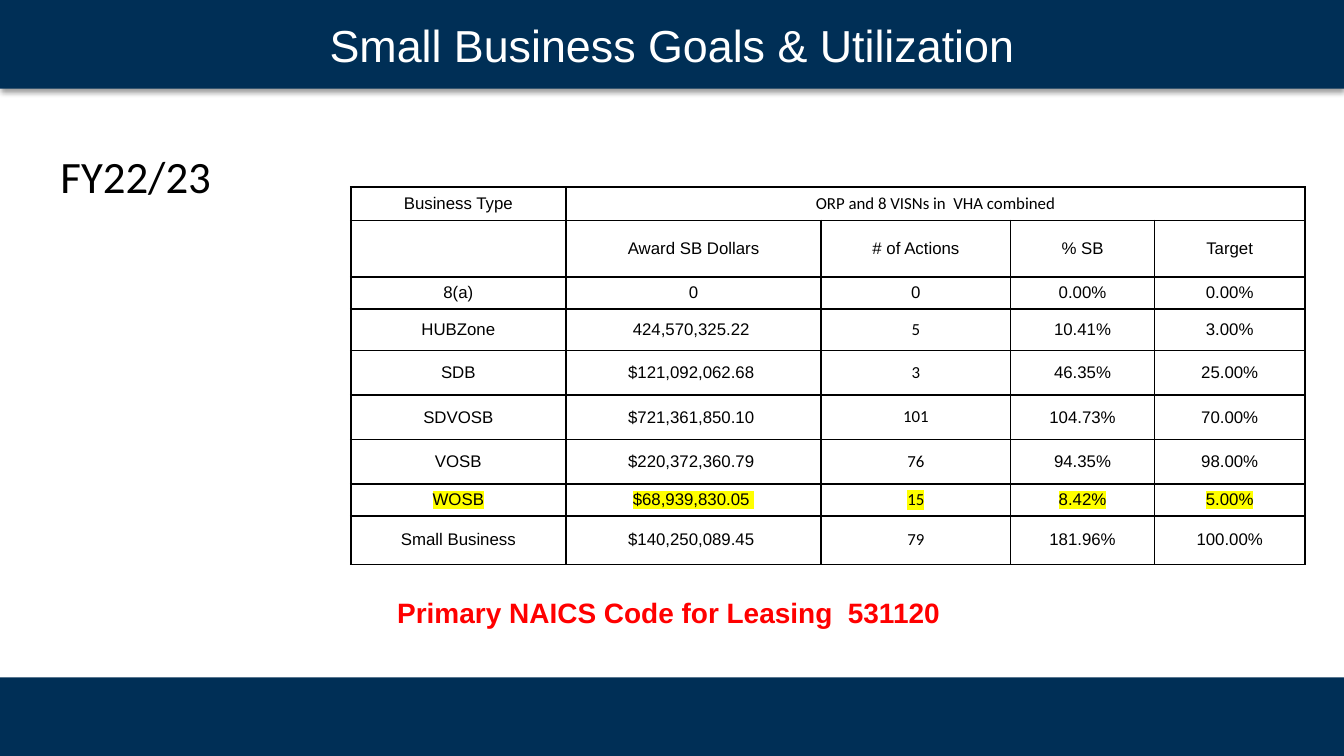
from dataclasses import dataclass

from lxml import etree
from pptx import Presentation
from pptx.dml.color import RGBColor
from pptx.enum import shapes, text
from pptx.oxml import ns
from pptx.util import Inches, Pt


@dataclass(frozen=True)
class Theme:
    navy: str = "002F56"
    white: str = "FFFFFF"
    black: str = "000000"
    red: str = "FF0000"
    yellow: str = "FFFF00"
    sans: str = "Arial"
    body: str = "Calibri"
    title_size: float = 24
    note_size: float = 15
    cell_size: float = 9
    border: float = 1


@dataclass(frozen=True)
class Box:
    left: float
    top: float
    width: float
    height: float

    def emu(self) -> list:
        return [Inches(v) for v in (self.left, self.top, self.width, self.height)]


@dataclass(frozen=True)
class Row:
    height: float
    cells: tuple
    body_cols: tuple = ()  # columns set in the body font
    highlight: bool = False


T = Theme()
COUNT = (2,)
COL_WIDTHS = (1.6, 1.9, 1.41, 1.07, 1.12)
ROWS = (
    Row(0.25, ("Business Type", "ORP and 8 VISNs in  VHA combined", "", "", ""), (1,)),
    Row(0.42, ("", "Award SB Dollars", "# of Actions", "% SB", "Target")),
    Row(0.24, ("8(a)", "0", "0", "0.00%", "0.00%")),
    Row(0.31, ("HUBZone", "424,570,325.22 ", "5", "10.41%", "3.00%"), COUNT),
    Row(0.33, ("SDB", "$121,092,062.68 ", "3", "46.35%", "25.00%"), COUNT),
    Row(0.33, ("SDVOSB", "$721,361,850.10 ", "101", "104.73%", "70.00%"), COUNT),
    Row(0.33, ("VOSB", "$220,372,360.79 ", "76", "94.35%", "98.00%"), COUNT),
    Row(0.24, ("WOSB", "$68,939,830.05 ", "15", "8.42%", "5.00%"), COUNT, True),
    Row(0.36, ("Small Business", "$140,250,089.45 ", "79", "181.96%", "100.00%"), COUNT),
)


def add_xml(parent, tag: str, **attrs):
    return etree.SubElement(parent, ns.qn(tag), {k: str(v) for k, v in attrs.items()})


def write(tf, words: str, *, size: float, color: str = T.black, font: str = T.sans,
          bold: bool = False, align=text.PP_ALIGN.CENTER, highlight: str = ""):
    p = tf.paragraphs[0]
    p.alignment = align
    r = p.add_run()
    r.text = words
    r.font.size = Pt(size)
    r.font.bold = bold
    r.font.color.rgb = RGBColor.from_string(color)
    r.font.name = font
    if highlight:
        rPr = r.font._element
        mark = add_xml(rPr, "a:highlight")
        add_xml(mark, "a:srgbClr", val=highlight)
        rPr.find(ns.qn("a:latin")).addprevious(mark)
    return p


def add_bar(s, box: Box):
    sp = s.shapes.add_shape(shapes.MSO_SHAPE.RECTANGLE, *box.emu())
    sp.shadow.inherit = False
    sp.fill.solid()
    sp.fill.fore_color.rgb = RGBColor.from_string(T.navy)
    sp.line.fill.background()
    return sp


def add_text(s, box: Box, words: str, *, anchor=text.MSO_ANCHOR.TOP, **fmt):
    sp = s.shapes.add_textbox(*box.emu())
    tf = sp.text_frame
    tf.word_wrap = True
    tf.vertical_anchor = anchor
    write(tf, words, **fmt)
    return sp


def drop_shadow(sp) -> None:
    effects = sp._element.spPr.find(ns.qn("a:effectLst"))
    shadow = add_xml(effects, "a:outerShdw", blurRad=Pt(3.1), dist=Pt(1.6),
                     dir=90 * 60000, algn="t", rotWithShape=0)
    color = add_xml(shadow, "a:srgbClr", val=T.black)
    add_xml(color, "a:alpha", val=38000)


def set_borders(cell) -> None:
    tcPr = cell._tc.get_or_add_tcPr()
    for i, side in enumerate(("a:lnL", "a:lnR", "a:lnT", "a:lnB")):
        ln = add_xml(tcPr, side, w=Pt(T.border))
        fill = add_xml(ln, "a:solidFill")
        add_xml(fill, "a:srgbClr", val=T.black)
        tcPr.insert(i, ln)


def add_goals_table(s, box: Box, rows: tuple, widths: tuple) -> None:
    table = s.shapes.add_table(len(rows), len(widths), *box.emu()).table
    table.first_row = table.horz_banding = False
    for col, width in zip(table.columns, widths):
        col.width = Inches(width)
    for i, row in enumerate(rows):
        table.rows[i].height = Inches(row.height)
        for j, words in enumerate(row.cells):
            cell = table.cell(i, j)
            cell.fill.solid()
            cell.fill.fore_color.rgb = RGBColor.from_string(T.white)
            cell.vertical_anchor = text.MSO_ANCHOR.MIDDLE
            cell.margin_left = cell.margin_right = Inches(0.06)
            cell.margin_top = cell.margin_bottom = 0
            set_borders(cell)
            write(cell.text_frame, words, size=T.cell_size,
                  font=T.body if j in row.body_cols else T.sans,
                  highlight=T.yellow if row.highlight else "")
    table.cell(0, 1).merge(table.cell(0, len(widths) - 1))


def main() -> None:
    # Widescreen page, 16:9
    prs = Presentation()
    prs.slide_width = Inches(10)
    prs.slide_height = prs.slide_width * 9 // 16
    s = prs.slides.add_slide(prs.slide_layouts[6])

    # Footer bar
    add_bar(s, Box(0, 5.04, 10, 0.6))

    # Fiscal year label
    label = add_text(s, Box(0.3, 1.06, 9.55, 3.89), "FY22/23", size=T.title_size,
                     font=T.body, align=text.PP_ALIGN.LEFT)
    label.text_frame.margin_left = Inches(0.15)

    # Title bar
    title = add_bar(s, Box(0, 0, 10, 0.66))
    drop_shadow(title)
    title.text_frame.vertical_anchor = text.MSO_ANCHOR.MIDDLE
    write(title.text_frame, "Small Business Goals & Utilization",
          size=T.title_size, color=T.white)

    # Leasing code note
    note = add_text(s, Box(2.48, 2.63, 5.05, 2.12),
                    "Primary NAICS Code for Leasing  531120 ",
                    anchor=text.MSO_ANCHOR.BOTTOM, size=T.note_size,
                    color=T.red, bold=True)
    note.text_frame.margin_bottom = Inches(0.07)

    # Goals table
    add_goals_table(s, Box(2.61, 1.39, 7.09, 2.82), ROWS, COL_WIDTHS)

    prs.save("out.pptx")


if __name__ == "__main__":
    main()
